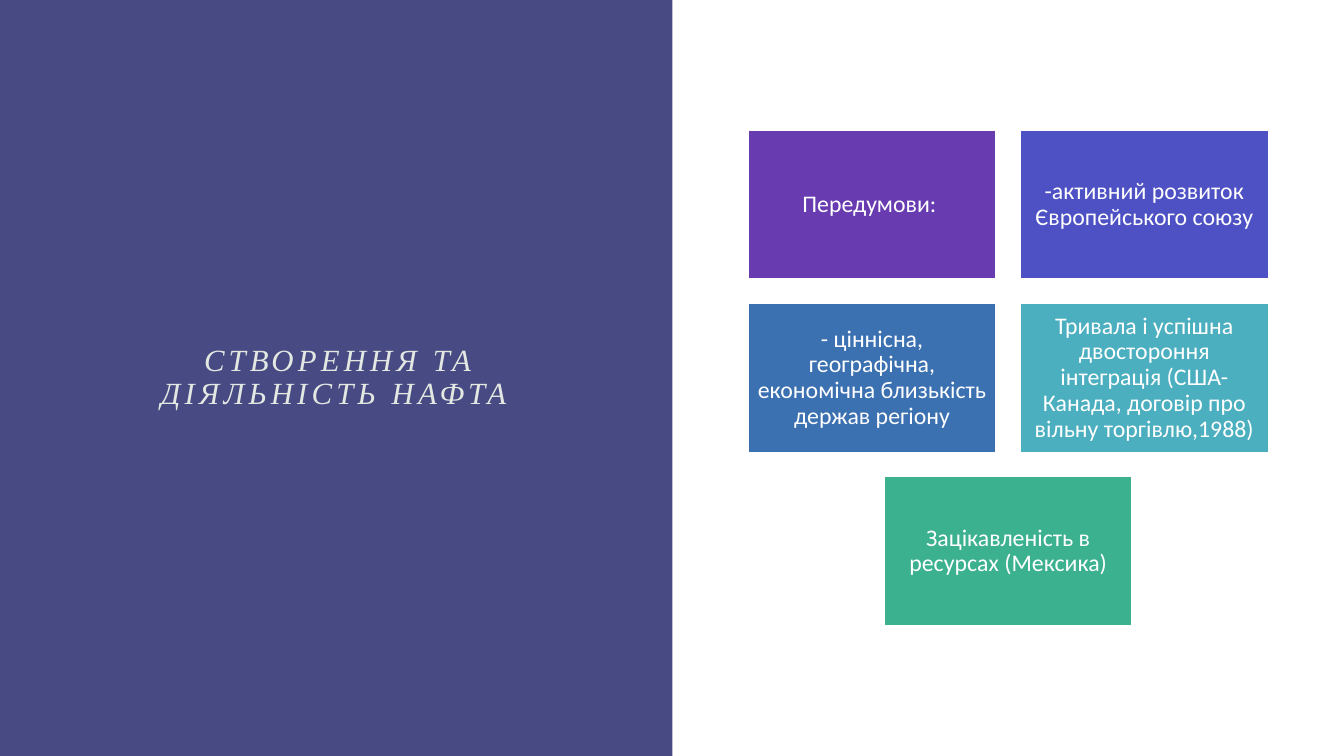
from pptx import Presentation
from pptx.dml.color import RGBColor
from pptx.enum.shapes import MSO_SHAPE
from pptx.enum.text import MSO_ANCHOR, MSO_AUTO_SIZE, PP_ALIGN
from pptx.util import Inches, Pt

WHITE = RGBColor(0xFF, 0xFF, 0xFF)
INDIGO = RGBColor(0x48, 0x4A, 0x83)
PALE = RGBColor(0xE3, 0xE8, 0xE2)
PURPLE = RGBColor(0x68, 0x3B, 0xB1)
VIOLET = RGBColor(0x4D, 0x51, 0xC3)
BLUE = RGBColor(0x3B, 0x70, 0xB1)
TEAL = RGBColor(0x4B, 0xAF, 0xBF)
GREEN = RGBColor(0x3B, 0xB1, 0x90)

PRECONDITIONS = [
    ("Передумови: ", PURPLE),
    ("-активний розвиток Європейського союзу", VIOLET),
    ("- ціннісна, географічна, економічна близькість держав регіону", BLUE),
    ("Тривала і успішна двостороння інтеграція (США-Канада, договір про вільну торгівлю,1988)", TEAL),
    ("Зацікавленість в ресурсах (Мексика)", GREEN),
]
COLUMNS = 2
CARD_WIDTH, CARD_HEIGHT = 2.46, 1.48
STEP_X, STEP_Y = 2.7, 1.72
GRID_LEFT, GRID_TOP = 7.42, 1.29


class SlideBuilder:
    """Holds the slide and the text style shared by its elements."""

    def __init__(self, slide):
        self.slide = slide

    def caption(self, frame, text, font_name, size, color):
        """Set one centred paragraph and return its run."""
        frame.word_wrap = True
        frame.auto_size = MSO_AUTO_SIZE.NONE
        frame.vertical_anchor = MSO_ANCHOR.MIDDLE
        paragraph = frame.paragraphs[0]
        paragraph.alignment = PP_ALIGN.CENTER
        paragraph.line_spacing = 0.9
        run = paragraph.add_run()
        run.text = text
        run.font.name = font_name
        run.font.size = Pt(size)
        run.font.color.rgb = color
        return run

    def rectangle(self, left, top, width, height, fill):
        """Add a plain filled rectangle."""
        box = self.slide.shapes.add_shape(
            MSO_SHAPE.RECTANGLE, Inches(left), Inches(top), Inches(width), Inches(height))
        box.shadow.inherit = False
        box.fill.solid()
        box.fill.fore_color.rgb = fill
        box.line.fill.background()
        return box

    def title(self, text, left, top, width, height):
        """Fill the title placeholder and bring it to the front."""
        heading = self.slide.shapes.title
        heading.left, heading.top = Inches(left), Inches(top)
        heading.width, heading.height = Inches(width), Inches(height)
        run = self.caption(heading.text_frame, text, "Times New Roman", 22, PALE)
        run.font.italic = True
        run.font._element.set("spc", "300")
        self.slide.shapes._spTree.append(heading._element)

    def card(self, left, top, text, fill):
        """Add a white-edged card with its caption."""
        box = self.rectangle(left, top, CARD_WIDTH, CARD_HEIGHT, fill)
        box.line.color.rgb = WHITE
        box.line.width = Pt(1)
        frame = box.text_frame
        frame.margin_left = frame.margin_right = Inches(0.07)
        frame.margin_top = frame.margin_bottom = Inches(0.07)
        self.caption(frame, text, "Calibri", 17, WHITE)


def main():
    """Build the slide and save it."""
    deck = Presentation()
    deck.slide_width, deck.slide_height = Inches(13.33), Inches(7.5)
    builder = SlideBuilder(deck.slides.add_slide(deck.slide_layouts[5]))
    builder.rectangle(0, 0, 6.67, 7.5, INDIGO)
    builder.title("СТВОРЕННЯ ТА ДІЯЛЬНІСТЬ НАФТА ", 1.11, 0.75, 4.52, 6)
    for index, (text, fill) in enumerate(PRECONDITIONS):
        row, column = divmod(index, COLUMNS)
        in_row = min(COLUMNS, len(PRECONDITIONS) - row * COLUMNS)
        indent = (COLUMNS - in_row) * STEP_X / 2
        builder.card(GRID_LEFT + indent + column * STEP_X, GRID_TOP + row * STEP_Y, text, fill)
    deck.save("out.pptx")


if __name__ == "__main__":
    main()
